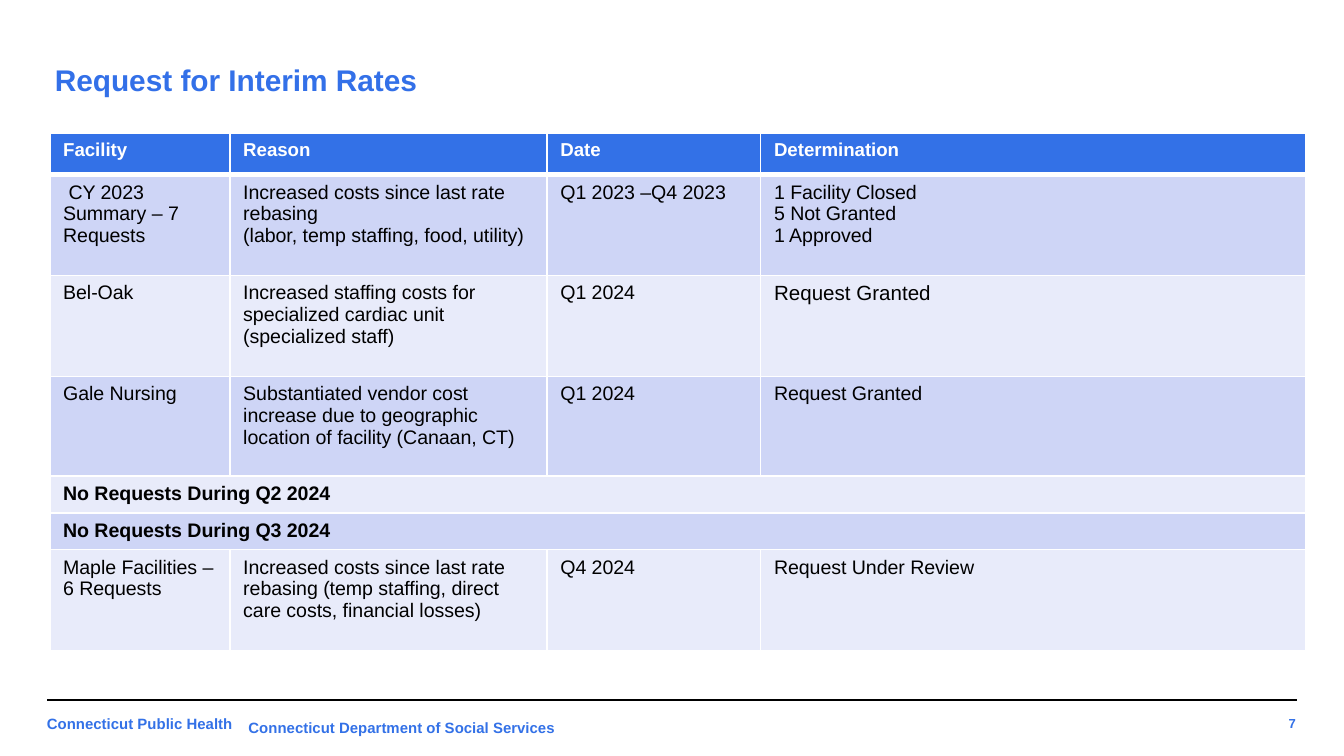
import pptx
import pptx.dml.color
import pptx.enum.shapes
import pptx.enum.text
import pptx.oxml.ns
import pptx.util
from lxml import etree

Inches = pptx.util.Inches
Pt = pptx.util.Pt
RGBColor = pptx.dml.color.RGBColor
Align = pptx.enum.text.PP_ALIGN
Anchor = pptx.enum.text.MSO_ANCHOR
qn = pptx.oxml.ns.qn

BLUE = RGBColor(0x33, 0x71, 0xE7)
TITLE_BLUE = RGBColor(0x33, 0x70, 0xE8)
DARK_BAND = RGBColor(0xCE, 0xD5, 0xF6)
LIGHT_BAND = RGBColor(0xE8, 0xEB, 0xFA)
WHITE = RGBColor(0xFF, 0xFF, 0xFF)
BLACK = RGBColor(0, 0, 0)
FONT = "Arial"

LABELS = [
    ("7", (9.14, 5.26, 0.6, 0.25), 7, BLUE, Align.RIGHT, Anchor.MIDDLE, 0.1),
    ("Connecticut Public Health", (0.25, 5.25, 3.28, 0.34), 8, BLUE, Align.LEFT, Anchor.TOP, 0.1),
    ("Request for Interim Rates", (0.31, 0.43, 9.32, 0.33), 16, TITLE_BLUE, Align.LEFT, Anchor.MIDDLE, 0.1),
    ("Connecticut Department of Social Services", (1.75, 5.3, 2.65, 0.24), 8, BLUE, Align.LEFT, Anchor.TOP, 0.05),
]
COLUMN_WIDTHS = [1.34, 2.36, 1.59, 4.06]
ROWS = [
    (0.31, ["Facility", "Reason", "Date", "Determination"]),
    (0.75, [" CY 2023 Summary – 7 Requests",
            "Increased costs since last rate rebasing\n(labor, temp staffing, food, utility)",
            "Q1 2023 –Q4 2023",
            "1 Facility Closed\n5 Not Granted\n1 Approved"]),
    (0.75, ["Bel-Oak",
            "Increased staffing costs for specialized cardiac unit (specialized staff)",
            "Q1 2024", "Request Granted"]),
    (0.74, ["Gale Nursing",
            "Substantiated vendor cost increase due to geographic location of facility (Canaan, CT)",
            "Q1 2024", "Request Granted"]),
    (0.27, ["No Requests During Q2 2024"]),
    (0.27, ["No Requests During Q3 2024"]),
    (0.75, ["Maple Facilities – 6 Requests",
            "Increased costs since last rate rebasing (temp staffing, direct care costs, financial losses)",
            "Q4 2024", "Request Under Review"]),
]
LARGER_CELL = (2, 3)


def format_text(text_frame, size, color, bold, align=Align.LEFT):
    for paragraph in text_frame.paragraphs:
        paragraph.alignment = align
        for run in paragraph.runs:
            run.font.name = FONT
            run.font.size = Pt(size)
            run.font.bold = bold
            run.font.color.rgb = color


def add_label(slide, text, box, size, color, align, anchor, inset):
    text_frame = slide.shapes.add_textbox(*map(Inches, box)).text_frame
    text_frame.word_wrap = True
    text_frame.vertical_anchor = anchor
    text_frame.margin_top = text_frame.margin_bottom = Inches(inset)
    text_frame.text = text
    format_text(text_frame, size, color, True, align)


def add_borders(cell, bottom_width):
    properties = cell._tc.get_or_add_tcPr()
    for side, width in (("L", 1), ("R", 1), ("T", 1), ("B", bottom_width)):
        line = etree.SubElement(properties, qn(f"a:ln{side}"), w=str(Pt(width)))
        fill = etree.SubElement(line, qn("a:solidFill"))
        etree.SubElement(fill, qn("a:srgbClr"), val=str(WHITE))


def add_requests_table(slide):
    frame = slide.shapes.add_table(
        len(ROWS), len(COLUMN_WIDTHS), Inches(0.37), Inches(0.99),
        Inches(sum(COLUMN_WIDTHS)), Inches(sum(height for height, _ in ROWS)))
    table = frame.table
    for column, width in zip(table.columns, COLUMN_WIDTHS):
        column.width = Inches(width)
    for row_index, (height, texts) in enumerate(ROWS):
        table.rows[row_index].height = Inches(height)
        header = row_index == 0
        spanning = len(texts) == 1
        band = BLUE if header else DARK_BAND if row_index % 2 else LIGHT_BAND
        for column_index in range(len(COLUMN_WIDTHS)):
            cell = table.cell(row_index, column_index)
            add_borders(cell, 3 if header else 1)
            cell.fill.solid()
            cell.fill.fore_color.rgb = band
        if spanning:
            table.cell(row_index, 0).merge(table.cell(row_index, len(COLUMN_WIDTHS) - 1))
        for column_index, text in enumerate(texts):
            size = 10 if header else 11 if (row_index, column_index) == LARGER_CELL else 10.5
            text_frame = table.cell(row_index, column_index).text_frame
            text_frame.text = text
            format_text(text_frame, size, WHITE if header else BLACK, header or spanning)


def add_footer_line(slide):
    line = slide.shapes.add_connector(
        pptx.enum.shapes.MSO_CONNECTOR.STRAIGHT,
        Inches(9.65), Inches(5.21), Inches(0.35), Inches(5.21))
    line.line.color.rgb = BLACK
    line.line.width = Pt(0.75)
    etree.SubElement(line._element.spPr, qn("a:effectLst"))


def main():
    presentation = pptx.Presentation()
    presentation.slide_width = Inches(10)
    presentation.slide_height = Inches(10 * 9 / 16)
    slide = presentation.slides.add_slide(presentation.slide_layouts[6])
    add_footer_line(slide)
    for label in LABELS:
        add_label(slide, *label)
    add_requests_table(slide)
    presentation.save("out.pptx")


if __name__ == "__main__":
    main()
